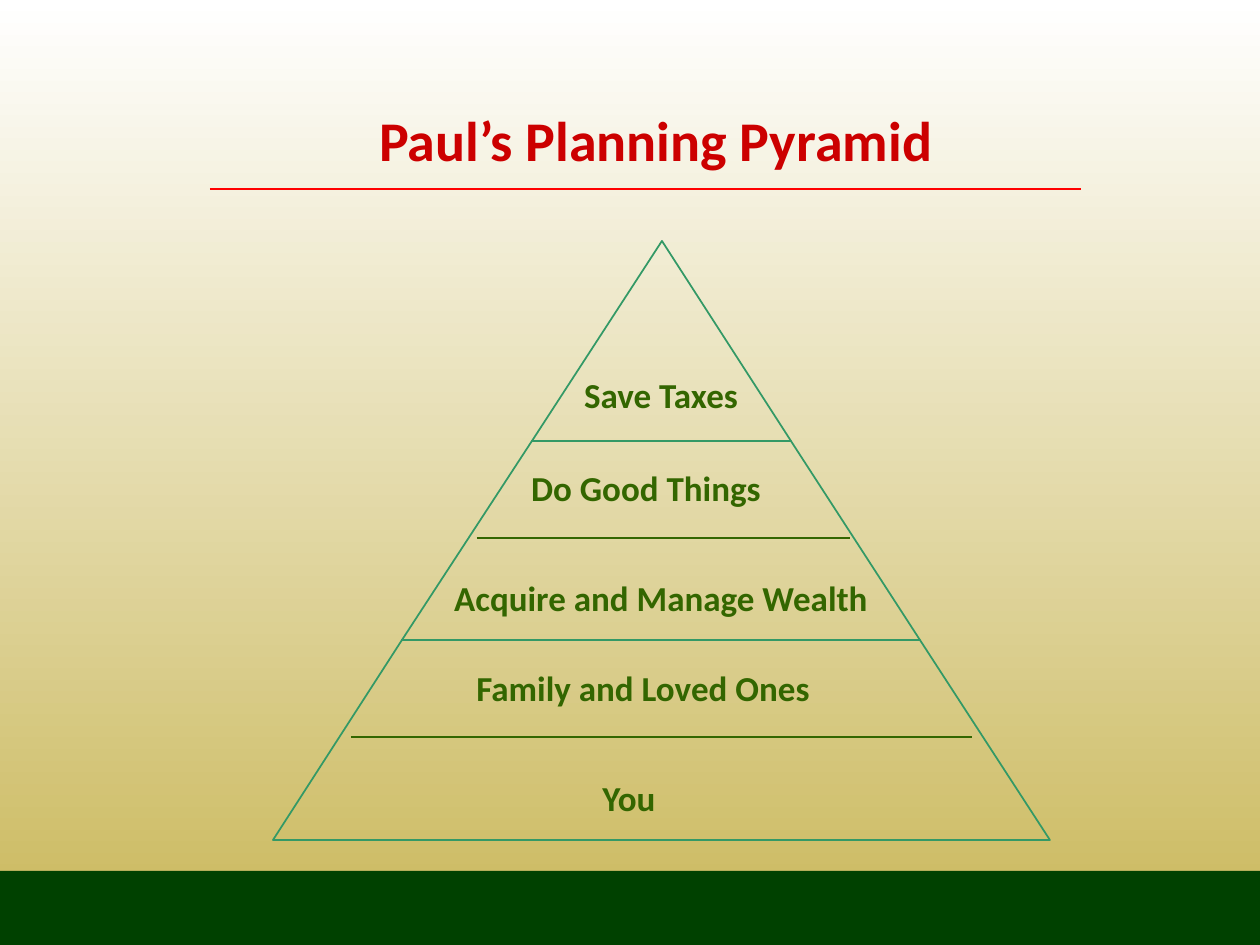
from pptx import Presentation
from pptx import util as u
from pptx.dml import color
from pptx.enum import shapes, text
from pptx.oxml import parse_xml
from pptx.oxml import ns

PX = u.Inches(1) / 126
TITLE = {"name": "Calibri", "size": u.Pt(32), "bold": True}
LABEL = {"name": "Calibri", "size": u.Pt(20), "bold": True}
ROWS = [("Save Taxes", 661, 394), ("Do Good Things", 646, 488),
        ("Acquire and Manage Wealth", 661, 598),
        ("Family and Loved Ones", 643, 688), ("You", 629, 797)]
RULES = [(477, 850, 538, 1.5), (351, 972, 737, 0.75)]


def emu(*px):
    """Turn px lengths into EMU."""
    return [round(n * PX) for n in px]


def rgb(code):
    """Turn a hex string into a colour."""
    return color.RGBColor.from_string(code)


def write(shape, words, style, ink):
    """Put one centred, formatted line of text into a shape."""
    frame = shape.text_frame
    frame.text = words
    look = {"word_wrap": True, "vertical_anchor": text.MSO_ANCHOR.MIDDLE,
            "auto_size": text.MSO_AUTO_SIZE.NONE}
    for key, value in look.items():
        setattr(frame, key, value)
    para = frame.paragraphs[0]
    para.alignment = text.PP_ALIGN.CENTER
    font = para.runs[0].font
    for key, value in style.items():
        setattr(font, key, value)
    font.color.rgb = rgb(ink)


def rule(slide, left, right, y, ink, width=1):
    """Draw a level line."""
    line = slide.shapes.add_connector(
        shapes.MSO_CONNECTOR.STRAIGHT, *emu(left, y, right, y))
    line.line.color.rgb = rgb(ink)
    line.line.width = u.Pt(width)
    line._element.spPr.append(parse_xml(f"<a:effectLst {ns.nsdecls('a')}/>"))


def panel(slide, box):
    """Add a plain rectangle without line or shadow."""
    shape = slide.shapes.add_shape(shapes.MSO_SHAPE.RECTANGLE, *emu(*box))
    shape.shadow.inherit = False
    shape.line.fill.background()
    return shape


def backdrop(slide, box):
    """Fill the box with a gradient that runs downwards."""
    fill = panel(slide, box).fill
    fill.gradient()
    fill.gradient_angle = 270
    for stop, ink, place in zip(fill.gradient_stops, ("FFFFFF", "CAB85B"), (0, 1)):
        stop.color.rgb = rgb(ink)
        stop.position = place


def heading(slide, box):
    """Place the title and the red line below it."""
    title = slide.shapes.title
    title.left, title.top, title.width, title.height = emu(*box)
    write(title, "Paul’s Planning Pyramid", TITLE, "CC0000")
    left, top, _, high = box
    rule(slide, left + 126, left + 997, top + high + 4, "FF0000")


def pyramid(slide, box, tiers=3):
    """Stack equal tiers in the box and label the five levels."""
    left, top, wide, high = box
    mid = left + wide / 2
    for tier in reversed(range(tiers)):
        (y1, h1), (y2, h2) = [(top + high * n / tiers, wide / 2 * n / tiers)
                              for n in (tier, tier + 1)]
        points = [(mid - h2, y2), (mid - h1, y1), (mid + h1, y1), (mid + h2, y2)]
        first, *rest = dict.fromkeys(points)
        path = slide.shapes.build_freeform(*first, scale=PX)
        path.add_line_segments(rest, close=True)
        shape = path.convert_to_shape()
        shape.shadow.inherit = False
        shape.fill.background()
        shape.line.color.rgb = rgb("339966")
        shape.line.width = u.Pt(1)
    for start, end, y, width in RULES:
        rule(slide, start, end, y, "336600", width)
    for words, x, y in ROWS:
        label = slide.shapes.add_textbox(*emu(x - 230, y - 25, 460, 50))
        write(label, words, LABEL, "336600")


def footer(slide, box):
    """Add the dark band at the foot."""
    fill = panel(slide, box).fill
    fill.solid()
    fill.fore_color.rgb = rgb("004100")


def main():
    """Build and save the slide."""
    deck = Presentation()
    deck.slide_width, deck.slide_height = emu(1260, 945)
    slide = deck.slides.add_slide(deck.slide_layouts[5])
    backdrop(slide, (0, 0, 1260, 945))
    tree = slide.shapes._spTree
    tree.append(slide.shapes.title._element)
    heading(slide, (84, 94, 1144, 91))
    pyramid(slide, (273, 241, 777, 599))
    footer(slide, (0, 871, 1260, 74))
    deck.save("out.pptx")


if __name__ == "__main__":
    main()
